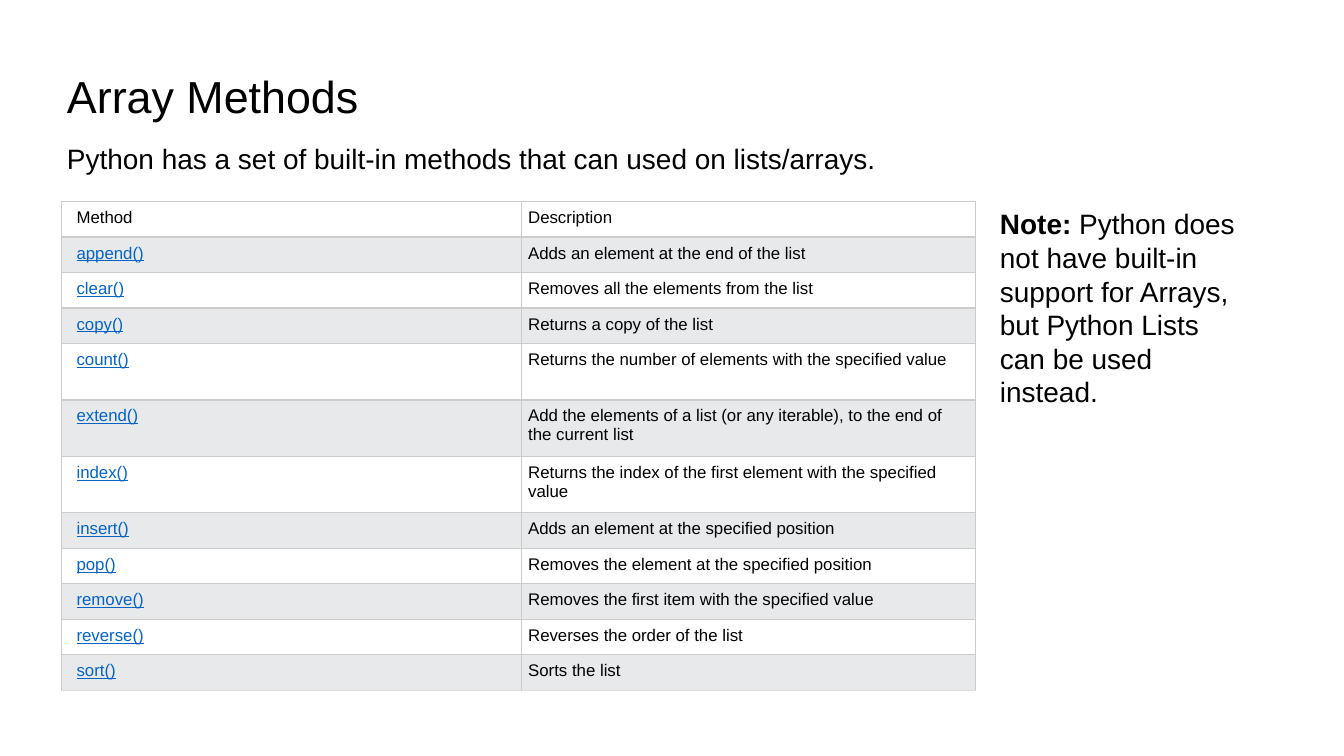
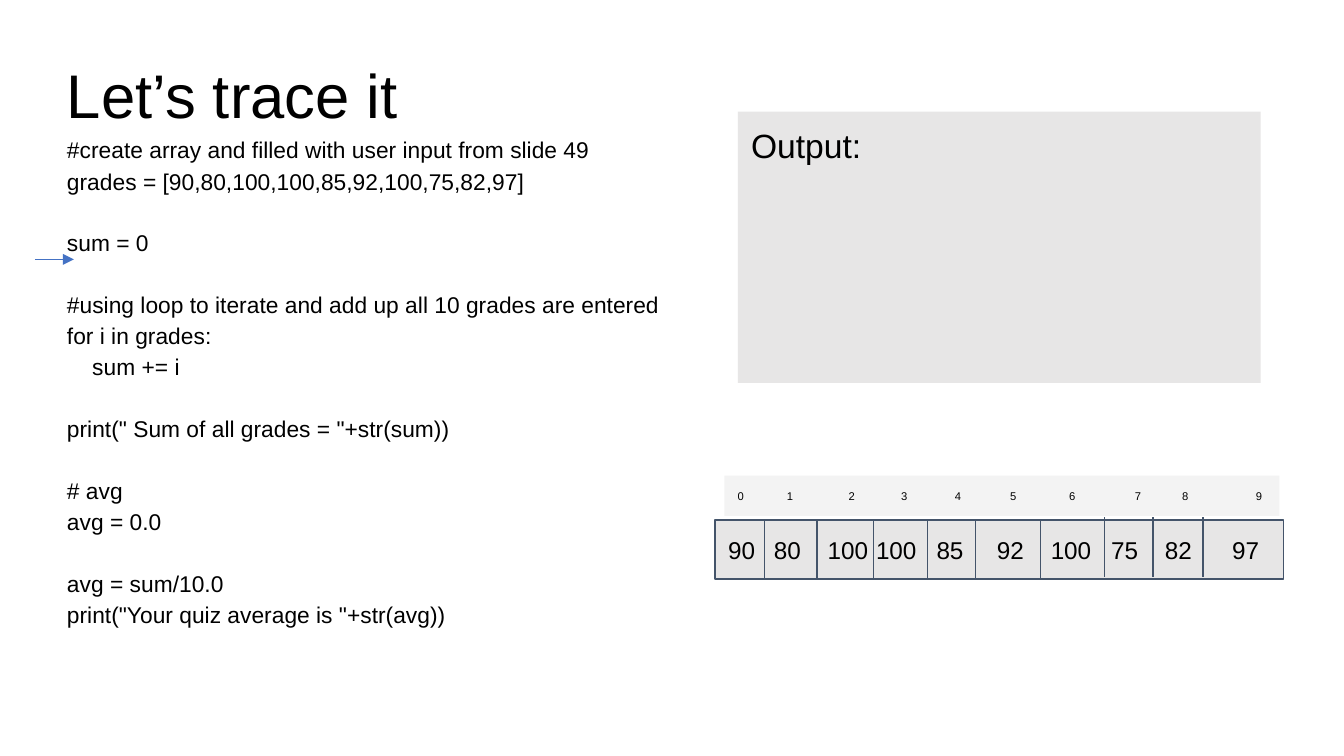
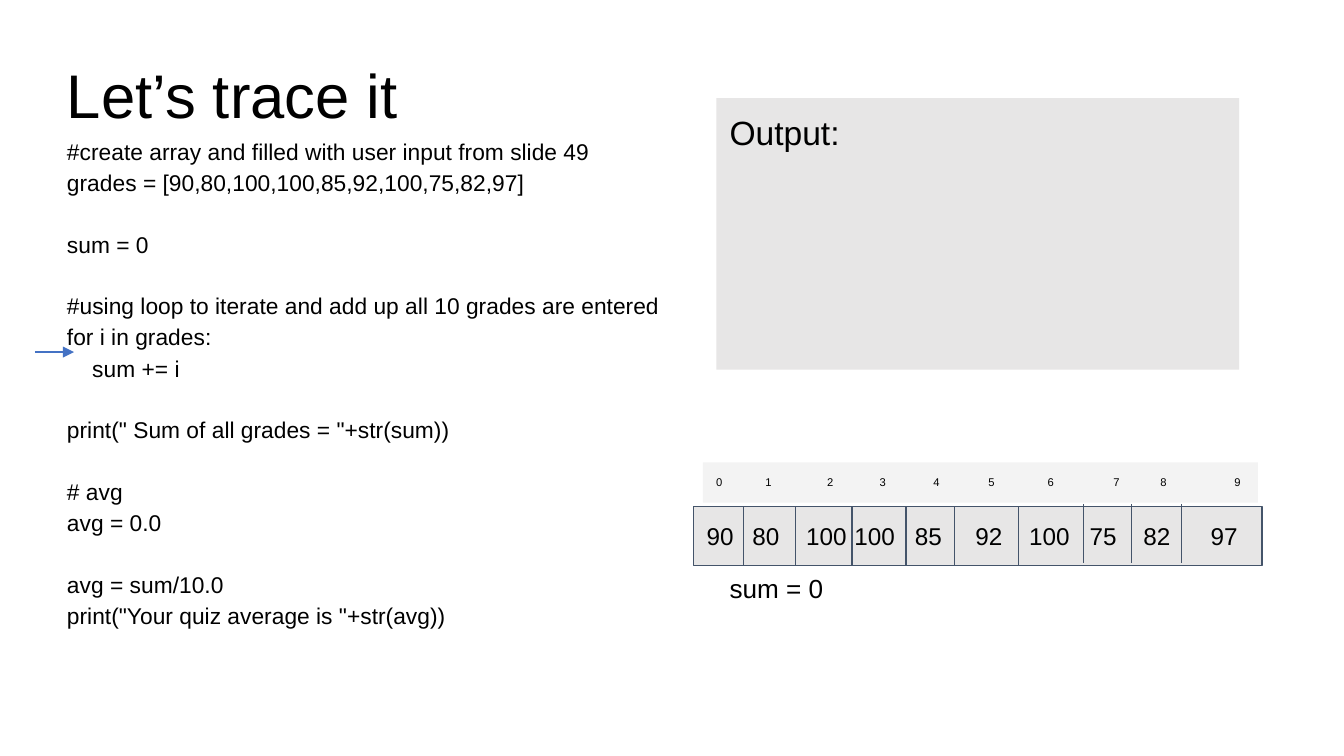
"""Build three slides on Python array methods and tracing a loop over grades."""
from lxml import etree
from pptx import Presentation
from pptx import util as u
from pptx.dml.color import RGBColor
from pptx.enum import shapes, text
from pptx.oxml import ns

COLOURS = {
    "ink": "000000", "link": "0563C1", "paper": "FFFFFF", "stripe": "E7E9EB",
    "rule": "CCCCCC", "last_rule": "DDDDDD", "index": "F3F3F3", "panel": "E7E6E6",
    "outline": "44546A", "pointer": "4472C4",
}
RGB = {name: RGBColor.from_string(value) for name, value in COLOURS.items()}
UNIT = u.Inches(0.1)
HAIRLINE = u.Pt(0.75)
TITLE_AREA = (4, 4.2, 92.1, 6.3)
MIDDLE = {"vertical_anchor": text.MSO_ANCHOR.MIDDLE}


def style_run(run, size, colour="ink", **extra):
    """Apply the shared font and any extra font values to a run."""
    values = {"name": "Arial", "size": u.Pt(size), **extra}
    for key, value in values.items():
        setattr(run.font, key, value)
    run.font.color.rgb = RGB[colour]


def add_text(slide, area, lines, size, inset=(1, 0.5), fill=None, outline=None,
             frame_values={}, spacing=None, tabs=()):
    """Add a text box or filled panel, with its area in grid units."""
    place = [int(part * UNIT) for part in area]
    if fill:
        box = slide.shapes.add_shape(shapes.MSO_SHAPE.RECTANGLE, *place)
        box.shadow.inherit = False
        box.fill.solid()
        box.fill.fore_color.rgb = RGB[fill]
        if outline:
            box.line.color.rgb = RGB[outline]
            box.line.width = HAIRLINE
        else:
            box.line.fill.background()
    else:
        box = slide.shapes.add_textbox(*place)
    across, down = (int(part * UNIT) for part in inset)
    values = {"word_wrap": True, "margin_left": across, "margin_right": across,
              "margin_top": down, "margin_bottom": down,
              "vertical_anchor": text.MSO_ANCHOR.TOP, **frame_values}
    for key, value in values.items():
        setattr(box.text_frame, key, value)
    for number, (line, gap) in enumerate(lines):
        paragraph = box.text_frame.paragraphs[0] if number == 0 else box.text_frame.add_paragraph()
        paragraph.alignment = text.PP_ALIGN.LEFT
        paragraph.line_spacing = spacing
        if number:
            paragraph.space_before = u.Pt(gap)
        if tabs:
            stops = etree.SubElement(paragraph._p.get_or_add_pPr(), ns.qn("a:tabLst"))
            for stop in tabs:
                etree.SubElement(stops, ns.qn("a:tab"), pos=str(int(stop * UNIT)), algn="ctr")
        run = paragraph.add_run()
        run.text = line
        style_run(run, size)
    return box.text_frame


deck = Presentation()
deck.slide_width = u.Inches(10)
deck.slide_height = deck.slide_width * 9 // 16
blank = deck.slide_layouts[6]

METHODS = [
    ("Method", "Description"),
    ("append()", "Adds an element at the end of the list"),
    ("clear()", "Removes all the elements from the list"),
    ("copy()", "Returns a copy of the list"),
    ("count()", "Returns the number of elements with the specified value"),
    ("extend()", "Add the elements of a list (or any iterable), to the end of the current list"),
    ("index()", "Returns the index of the first element with the specified value"),
    ("insert()", "Adds an element at the specified position"),
    ("pop()", "Removes the element at the specified position"),
    ("remove()", "Removes the first item with the specified value"),
    ("reverse()", "Reverses the order of the list"),
    ("sort()", "Sorts the list"),
]
TALL_ROWS = ("count()", "extend()", "index()")
TABLE_HEIGHT, TALL = 36.4, 4.2
SHORT = (TABLE_HEIGHT - TALL * len(TALL_ROWS)) / (len(METHODS) - len(TALL_ROWS))

methods_slide = deck.slides.add_slide(blank)
add_text(methods_slide, TITLE_AREA, [("Array Methods", 0)], 24, frame_values=MIDDLE, spacing=0.9)
add_text(methods_slide, (4, 10.3, 69.9, 4),
         [("Python has a set of built-in methods that can used on lists/arrays.", 0)],
         15, spacing=0.9)

table_area = [int(part * UNIT) for part in (4.6, 15, 68, TABLE_HEIGHT)]
methods = methods_slide.shapes.add_table(len(METHODS), 2, *table_area).table
for column, width in zip(methods.columns, (34.2, 33.8)):
    column.width = int(width * UNIT)
for row_number, entry in enumerate(METHODS):
    methods.rows[row_number].height = int((TALL if entry[0] in TALL_ROWS else SHORT) * UNIT)
    for column_number, words in enumerate(entry):
        cell = methods.cell(row_number, column_number)
        margins = {"margin_left": int((0.5 if column_number else 1.1) * UNIT),
                   "margin_right": UNIT // 2, "margin_top": UNIT // 2,
                   "margin_bottom": UNIT // 2}
        for key, value in margins.items():
            setattr(cell, key, value)
        cell.fill.solid()
        cell.fill.fore_color.rgb = RGB["stripe" if row_number % 2 else "paper"]
        run = cell.text_frame.paragraphs[0].add_run()
        run.text = words
        is_method = row_number > 0 and column_number == 0
        style_run(run, 9, "link" if is_method else "ink", bold=False, underline=is_method)
        cell_format = cell._tc.get_or_add_tcPr()
        for order, side in enumerate(("lnL", "lnR", "lnT", "lnB")):
            is_last = side == "lnB" and row_number == len(METHODS) - 1
            border = etree.Element(ns.qn(f"a:{side}"), w=str(HAIRLINE))
            paint = etree.SubElement(border, ns.qn("a:solidFill"))
            etree.SubElement(paint, ns.qn("a:srgbClr"),
                             val=COLOURS["last_rule" if is_last else "rule"])
            cell_format.insert(order, border)

note = add_text(methods_slide, (73.7, 15, 20, 15.9), [("Note:", 0)], 15, inset=(0.7, 0.4))
note.paragraphs[0].runs[0].font.bold = True
advice = note.paragraphs[0].add_run()
advice.text = " Python does not have built-in support for Arrays, but Python Lists can be used instead."
style_run(advice, 15, bold=False)

NEXT_LINE, AFTER_GAP = 7.5, 23.84
CODE = [
    ("#create array and filled with user input from slide 49", 0),
    ("grades = [90,80,100,100,85,92,100,75,82,97]", NEXT_LINE),
    ("sum = 0", AFTER_GAP),
    ("#using loop to iterate and add up all 10 grades are entered", AFTER_GAP),
    ("for i in grades:", NEXT_LINE),
    ("    sum += i", NEXT_LINE),
    ('print(" Sum of all grades = "+str(sum))', AFTER_GAP),
    ("# avg", AFTER_GAP),
    ("avg = 0.0", NEXT_LINE),
    ("avg = sum/10.0", AFTER_GAP),
    ('print("Your quiz average is "+str(avg))', NEXT_LINE),
]
GRADES = (90, 80, 100, 100, 85, 92, 100, 75, 82, 97)
INDEX_TABS = (3.9, 8.5, 12.4, 16.4, 20.5, 24.9, 29.8, 33.3, 38.8)
GRADE_TABS = (4.4, 8.9, 12.5, 16.5, 21, 25.5, 29.5, 33.5, 38.5)
DIVIDERS = (3.7, 7.6, 11.8, 15.8, 19.4, 24.2, 29, 32.6, 36.3)
GRADES_HEIGHT = 4.4

STEPS = [
    {"left": 53.2, "top": 38.7, "pointer": 19.3, "code": 10.3, "total": None},
    {"left": 51.6, "top": 37.7, "pointer": 26.2, "code": 10.4, "total": "sum = 0"},
]
for step in STEPS:
    slide = deck.slides.add_slide(blank)
    left, top, pointer = step["left"], step["top"], step["pointer"]
    add_text(slide, TITLE_AREA, [("Let’s trace it", 0)], 33, frame_values=MIDDLE, spacing=0.9)
    add_text(slide, (left + 0.7, top - 3.3, 41.3, 3),
             [("\t".join(str(index) for index in range(len(GRADES))), 0)],
             6, inset=(1, 1), fill="index", tabs=INDEX_TABS)
    add_text(slide, (left + 1.7, top - 30.4, 38.9, 20.2), [("Output:", 0)], 18,
             inset=(1, 1), fill="panel")
    add_text(slide, (left, top, 42.3, GRADES_HEIGHT),
             [("\t".join(str(grade) for grade in GRADES), 0)], 13, inset=(1, 1),
             fill="panel", outline="outline", frame_values=MIDDLE, tabs=GRADE_TABS)

    strokes = [((2.6, pointer, 5.5, pointer), "pointer")]
    for number, offset in enumerate(DIVIDERS):
        start = top - (0.2 if number >= 6 else 0)
        strokes.append(((left + offset, start, left + offset, start + GRADES_HEIGHT), "outline"))
    for ends, role in strokes:
        stroke = slide.shapes.add_connector(shapes.MSO_CONNECTOR.STRAIGHT,
                                            *(int(end * UNIT) for end in ends))
        stroke.line.color.rgb = RGB[role]
        stroke.line.width = HAIRLINE
        if role == "pointer":
            etree.SubElement(stroke.line._get_or_add_ln(), ns.qn("a:tailEnd"), type="triangle")
        etree.SubElement(stroke._element.spPr, ns.qn("a:effectLst"))

    if step["total"]:
        add_text(slide, (left + 1.7, top + GRADES_HEIGHT, 12, 5.7), [(step["total"], 0)], 14)
    add_text(slide, (4, step["code"], 53.9, 41.1), CODE, 12.2, spacing=0.63)

deck.save("out.pptx")
